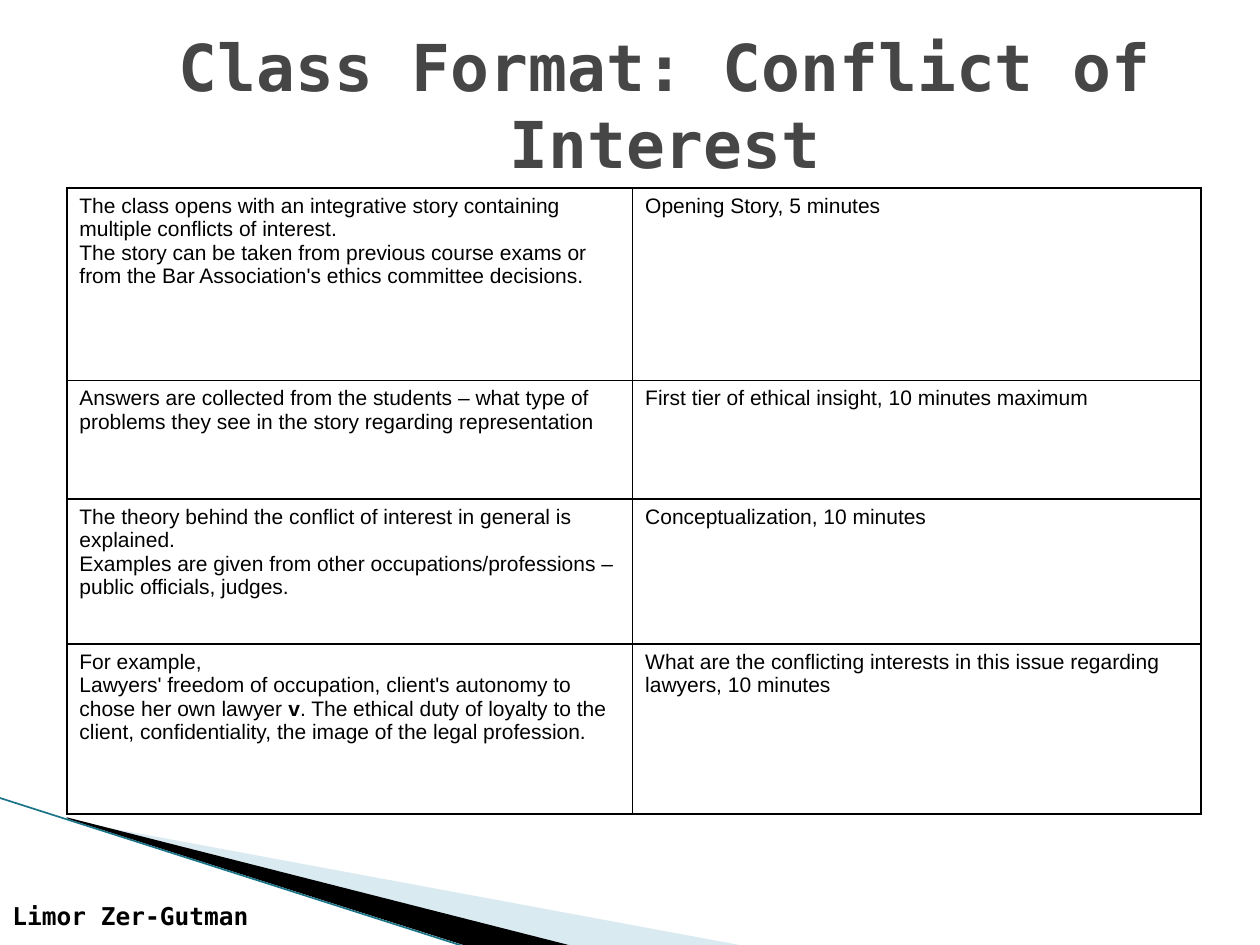
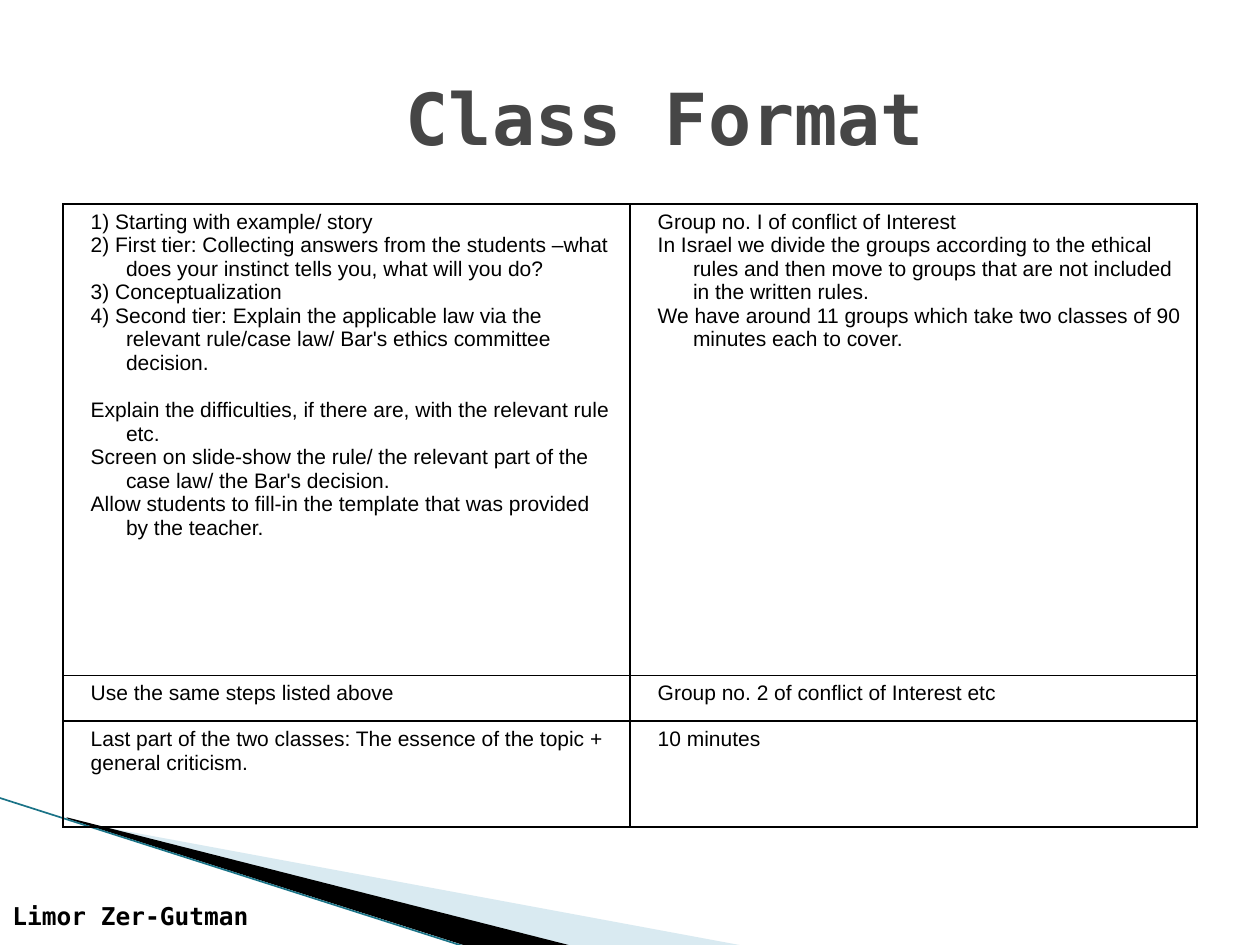
import pptx
import pptx.util
import pptx.dml.color
import pptx.enum.shapes
import pptx.enum.text
import pptx.oxml
import pptx.oxml.ns
import lxml.etree

Pt = pptx.util.Pt
qn = pptx.oxml.ns.qn
ALIGN = pptx.enum.text.PP_ALIGN
ANCHOR = pptx.enum.text.MSO_ANCHOR

COLORS = {"title": "464646", "ink": "000000", "pale": "A0CBDC", "edge": "1A7387"}
HEADING_FONT = "DejaVu Sans Mono"
BODY_FONT = "Arial"
HANGING = (28.8, -20.16)
FLUSH = (0, 0)
NUDGED = (8.64, 0)
BLANK_LINE = 13.4


def rgb(name):
    return pptx.dml.color.RGBColor.from_string(COLORS[name])


def write_text(frame, text, size, font, color="ink", bold=False, align=ALIGN.LEFT,
               anchor=ANCHOR.TOP, indent=FLUSH, gap_before=None):
    frame.word_wrap = True
    frame.vertical_anchor = anchor
    for number, line in enumerate(text.split("\n")):
        paragraph = frame.paragraphs[0] if number == 0 else frame.add_paragraph()
        paragraph.alignment = align
        properties = paragraph._p.get_or_add_pPr()
        properties.set("marL", str(Pt(indent[0])))
        properties.set("indent", str(Pt(indent[1])))
        if number == gap_before:
            paragraph.space_before = Pt(BLANK_LINE)
        for part, words in enumerate(line.split("*")):
            run = paragraph.add_run()
            run.text = words
            run.font.size = Pt(size)
            run.font.name = font
            run.font.bold = bold or part % 2 == 1
            run.font.color.rgb = rgb(color)


SWOOSHES = [
    ("pale", 40, [(39.6, 468.7), (428.4, 540.7), (328.3, 540.7), (39.6, 468)]),
    ("ink", 100, [(38.2, 467.3), (329, 540.7), (267.8, 541.4), (38.9, 468)]),
]

SLIDES = [
    {
        "title": "Class Format: Conflict of Interest",
        "title_size": 36.9,
        "title_height": 75.6,
        "origin": (38.2, 107.3),
        "columns": [323.3, 324.7],
        "row_heights": [110.2, 67.7, 82.8, 97.2],
        "indent": FLUSH,
        "rows": [
            ("The class opens with an integrative story containing multiple conflicts of interest.\n"
             "The story can be taken from previous course exams or from the Bar Association's "
             "ethics committee decisions.",
             "Opening Story, 5 minutes"),
            ("Answers are collected from the students – what type of problems they see in the "
             "story regarding representation",
             "First tier of ethical insight, 10 minutes maximum"),
            ("The theory behind the conflict of interest in general is explained.\n"
             "Examples are given from other occupations/professions – public officials, judges.",
             "Conceptualization, 10 minutes"),
            ("For example,\n"
             "Lawyers' freedom of occupation, client's autonomy to chose her own lawyer *v*. "
             "The ethical duty of loyalty to the client, confidentiality, the image of the "
             "legal profession.",
             "What are the conflicting interests in this issue regarding lawyers, 10 minutes"),
        ],
        "cell_formats": {},
    },
    {
        "title": "Class Format",
        "title_size": 41,
        "title_height": 90,
        "origin": (36, 116.6),
        "columns": [324, 324],
        "row_heights": [269.3, 26.2, 60.5],
        "indent": HANGING,
        "rows": [
            ("1) Starting with example/ story\n"
             "2) First tier: Collecting answers from the students –what does your instinct "
             "tells you, what will you do?\n"
             "3) Conceptualization\n"
             "4) Second tier: Explain the applicable law via the relevant rule/case law/ "
             "Bar's ethics committee decision.\n"
             "Explain the difficulties, if there are, with the relevant rule etc.\n"
             "Screen on slide-show the rule/ the relevant part of the case law/ the Bar's decision.\n"
             "Allow students to fill-in the template that was provided by the teacher.",
             "Group no. I of conflict of Interest\n"
             "In Israel we divide the groups according to the ethical rules and then move to "
             "groups that are not included in the written rules.\n"
             "We have around 11 groups which take two classes of 90 minutes each to cover."),
            ("Use the same steps listed above",
             "Group no. 2 of conflict of Interest etc"),
            ("Last part of the two classes: The essence of the topic + general criticism.",
             "10 minutes"),
        ],
        "cell_formats": {(0, 0): {"gap_before": 4}, (2, 0): {"indent": NUDGED}},
    },
]

deck = pptx.Presentation()
deck.slide_width = Pt(720)
deck.slide_height = Pt(540)

for content in SLIDES:
    slide = deck.slides.add_slide(deck.slide_layouts[6])

    for color, opacity, outline in SWOOSHES:
        builder = slide.shapes.build_freeform(*outline[0], scale=Pt(1))
        builder.add_line_segments(outline[1:], close=True)
        swoosh = builder.convert_to_shape()
        swoosh.shadow.inherit = False
        swoosh.fill.solid()
        swoosh.fill.fore_color.rgb = rgb(color)
        swoosh.line.fill.background()
        if opacity < 100:
            tint = swoosh._element.spPr.find(qn("a:solidFill"))[0]
            lxml.etree.SubElement(tint, qn("a:alpha")).set("val", str(opacity * 1000))

    edge = slide.shapes.add_connector(
        pptx.enum.shapes.MSO_CONNECTOR.STRAIGHT, Pt(-0.7), Pt(455.8), Pt(267.1), Pt(541.4))
    edge.line.color.rgb = rgb("edge")
    edge.line.width = Pt(0.95)
    lxml.etree.SubElement(edge._element.spPr, qn("a:effectLst"))

    author = slide.shapes.add_textbox(Pt(0), Pt(511.2), Pt(185), Pt(28.8))
    write_text(author.text_frame, "Limor Zer-Gutman", size=14, font=HEADING_FONT, bold=True)

    title = slide.shapes.add_textbox(Pt(76.3), Pt(21.6), Pt(607.7), Pt(content["title_height"]))
    write_text(title.text_frame, content["title"], size=content["title_size"],
               font=HEADING_FONT, color="title", bold=True, align=ALIGN.CENTER,
               anchor=ANCHOR.MIDDLE)

    left, top = content["origin"]
    widths, heights = content["columns"], content["row_heights"]
    plan = slide.shapes.add_table(len(heights), len(widths), Pt(left), Pt(top),
                                  Pt(sum(widths)), Pt(sum(heights))).table
    plan.first_row = False
    plan.horz_banding = False
    for column, width in zip(plan.columns, widths):
        column.width = Pt(width)
    for row, height in zip(plan.rows, heights):
        row.height = Pt(height)

    for r, texts in enumerate(content["rows"]):
        for c, text in enumerate(texts):
            cell = plan.cell(r, c)
            properties = cell._tc.get_or_add_tcPr()
            for side in ("lnL", "lnR", "lnT", "lnB"):
                border = lxml.etree.SubElement(properties, qn("a:" + side), w=str(Pt(1)))
                paint = lxml.etree.SubElement(border, qn("a:solidFill"))
                lxml.etree.SubElement(paint, qn("a:srgbClr"), val=COLORS["ink"])
            cell.fill.background()
            cell_format = {"indent": content["indent"], **content["cell_formats"].get((r, c), {})}
            write_text(cell.text_frame, text, size=12, font=BODY_FONT, **cell_format)

deck.save("out.pptx")
